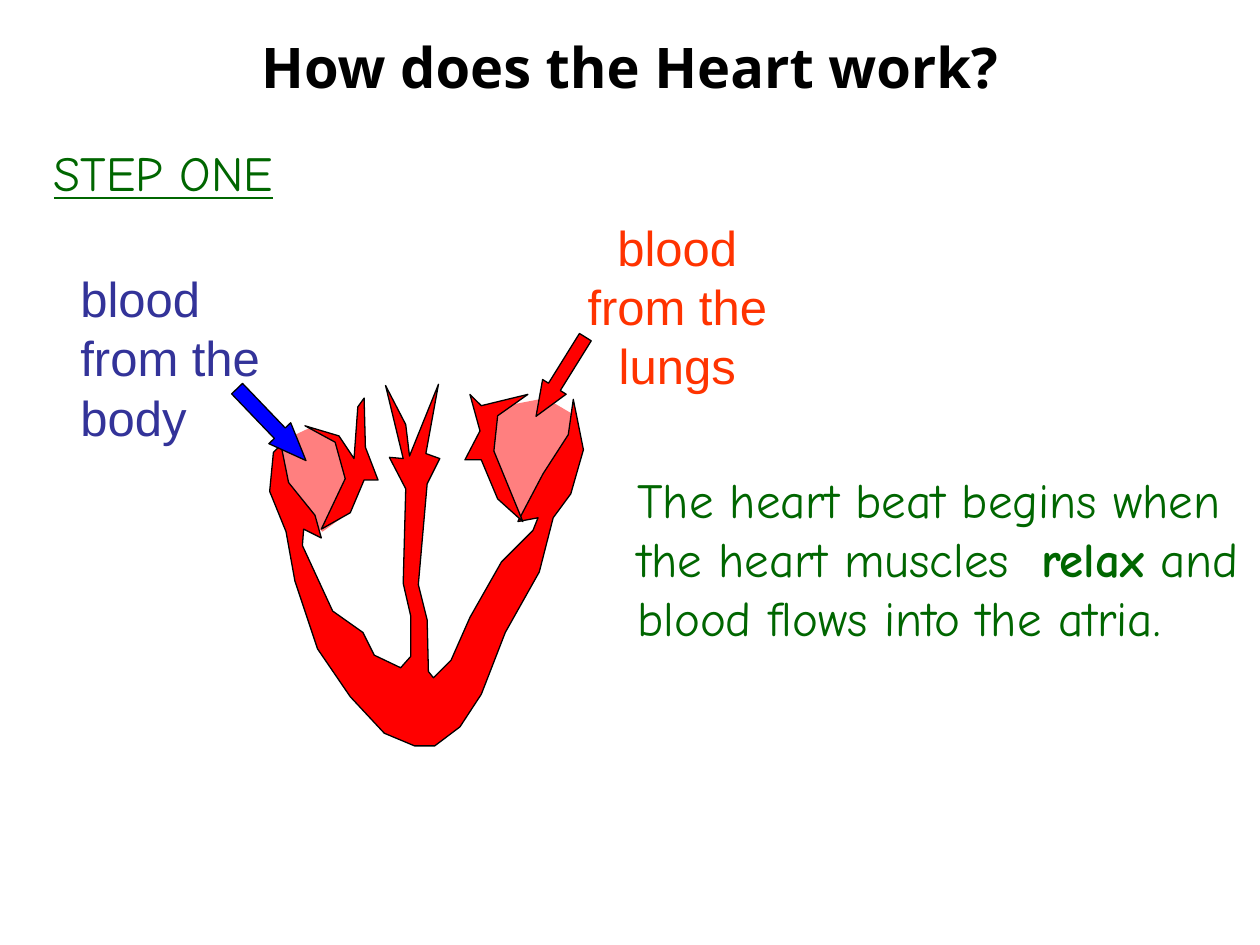
"""Build the slide on the first step of the heart beat, with a labelled heart section."""
import lxml.etree
import pptx
import pptx.dml.color
import pptx.enum.shapes
import pptx.enum.text
import pptx.oxml.ns
import pptx.util

PX = 9144
COLORS = {
    "title": "000000", "outline": "000000", "muscle": "FF0000", "body_blood": "0000FF",
    "body_label": "333399", "lung_label": "FF3300", "step": "006600",
}
ALIGN = pptx.enum.text.PP_ALIGN


def rgb(name):
    return pptx.dml.color.RGBColor.from_string(COLORS[name])


def style_text(shape, box, runs, font, size, color, align):
    shape.left, shape.top, shape.width, shape.height = [value * PX for value in box]
    frame = shape.text_frame
    frame.word_wrap = True
    frame.auto_size = pptx.enum.text.MSO_AUTO_SIZE.NONE
    frame.vertical_anchor = pptx.enum.text.MSO_ANCHOR.TOP
    paragraph = frame.paragraphs[0]
    paragraph.alignment = align
    paragraph.font.name = font
    paragraph.font.size = pptx.util.Pt(size)
    paragraph.font.color.rgb = rgb(color)
    for text in runs:
        paragraph.add_run().text = text
    return paragraph


presentation = pptx.Presentation()
presentation.slide_width = 1000 * PX
presentation.slide_height = 750 * PX
slide = presentation.slides.add_slide(presentation.slide_layouts[5])

title = style_text(slide.shapes.title, (0, 21, 1000, 64), ["How does the Heart work?"],
                   "Open Sans", 32, "title", ALIGN.CENTER)
title.font.bold = True

left_atrium_blood = [
    (392, 333), (384, 356), (397, 394), (414, 410), (432, 402), (456, 358),
    (455, 329), (433, 316), (407, 321),
]
right_atrium_blood = [
    (220, 368), (232, 399), (256, 422), (278, 406), (284, 391), (270, 352),
    (245, 340), (228, 348),
]
heart_wall = [
    (217, 359), (214, 390), (227, 422), (234, 461), (252, 515), (278, 553),
    (305, 582), (329, 592), (345, 592), (365, 577), (382, 551), (401, 502),
    (428, 454), (439, 411), (453, 392), (463, 357), (455, 317), (451, 345),
    (431, 376), (411, 414), (427, 411), (423, 421), (398, 446), (373, 490),
    (358, 524), (344, 538), (340, 533), (339, 492), (332, 464), (339, 384),
    (349, 364), (338, 360), (348, 305), (325, 362), (322, 337), (306, 306),
    (320, 364), (309, 363), (322, 388), (320, 463), (326, 489), (326, 521),
    (318, 530), (297, 520), (288, 502), (264, 485), (240, 433), (241, 420),
    (255, 427), (250, 409), (229, 383), (223, 353),
]
right_atrium_wall = [
    (242, 338), (266, 351), (274, 380), (255, 420), (278, 407), (289, 381),
    (300, 381), (290, 355), (289, 316), (284, 323), (281, 364), (269, 346),
]
left_atrium_wall = [
    (419, 313), (395, 330), (392, 358), (415, 414), (395, 396), (382, 365),
    (369, 365), (381, 342), (373, 313), (382, 322),
]

for points, is_blood in [
    (left_atrium_blood, True),
    (right_atrium_blood, True),
    (heart_wall, False),
    (right_atrium_wall, False),
    (left_atrium_wall, False),
]:
    builder = slide.shapes.build_freeform(*points[0], scale=PX)
    builder.add_line_segments(points[1:], close=True)
    shape = builder.convert_to_shape()
    shape.shadow.inherit = False
    shape.fill.solid()
    shape.fill.fore_color.rgb = rgb("muscle")
    if is_blood:
        shape.line.fill.background()
        fill_color = shape.element.spPr.find(".//" + pptx.oxml.ns.qn("a:srgbClr"))
        lxml.etree.SubElement(fill_color, pptx.oxml.ns.qn("a:alpha"), val="50000")
    else:
        shape.line.color.rgb = rgb("outline")
        shape.line.width = pptx.util.Pt(0.75)

for box, rotation, color in [
    ((176, 325, 79, 24), 46.2, "body_blood"),
    ((408, 288, 74, 22), 121.9, "muscle"),
]:
    arrow = slide.shapes.add_shape(pptx.enum.shapes.MSO_SHAPE.RIGHT_ARROW,
                                   *[value * PX for value in box])
    arrow.shadow.inherit = False
    arrow.rotation = rotation
    arrow.adjustments[0] = 0.5
    arrow.adjustments[1] = 1.25
    arrow.fill.solid()
    arrow.fill.fore_color.rgb = rgb(color)
    arrow.line.color.rgb = rgb("outline")
    arrow.line.width = pptx.util.Pt(0.75)

explanation = ["The heart beat begins when the heart muscles  ", "relax",
               " and blood flows into the atria."]
for box, runs, font, color, align in [
    ((54, 208, 200, 151), ["blood from the body"], "Arial", "body_label", ALIGN.LEFT),
    ((454, 167, 167, 151), ["blood from the lungs"], "Arial", "lung_label", ALIGN.CENTER),
    ((496, 367, 504, 199), explanation, "Comic Neue", "step", ALIGN.LEFT),
    ((33, 108, 307, 57), ["STEP ONE"], "Comic Neue", "step", ALIGN.LEFT),
]:
    text_box = slide.shapes.add_textbox(0, 0, PX, PX)
    paragraph = style_text(text_box, box, runs, font, 28, color, align)
    paragraph.line_spacing = pptx.util.Emu(47 * PX)
    for run in paragraph.runs:
        if run.text == "relax":
            run.font.bold = True
        if run.text == "STEP ONE":
            run.font.underline = True

presentation.save("out.pptx")
